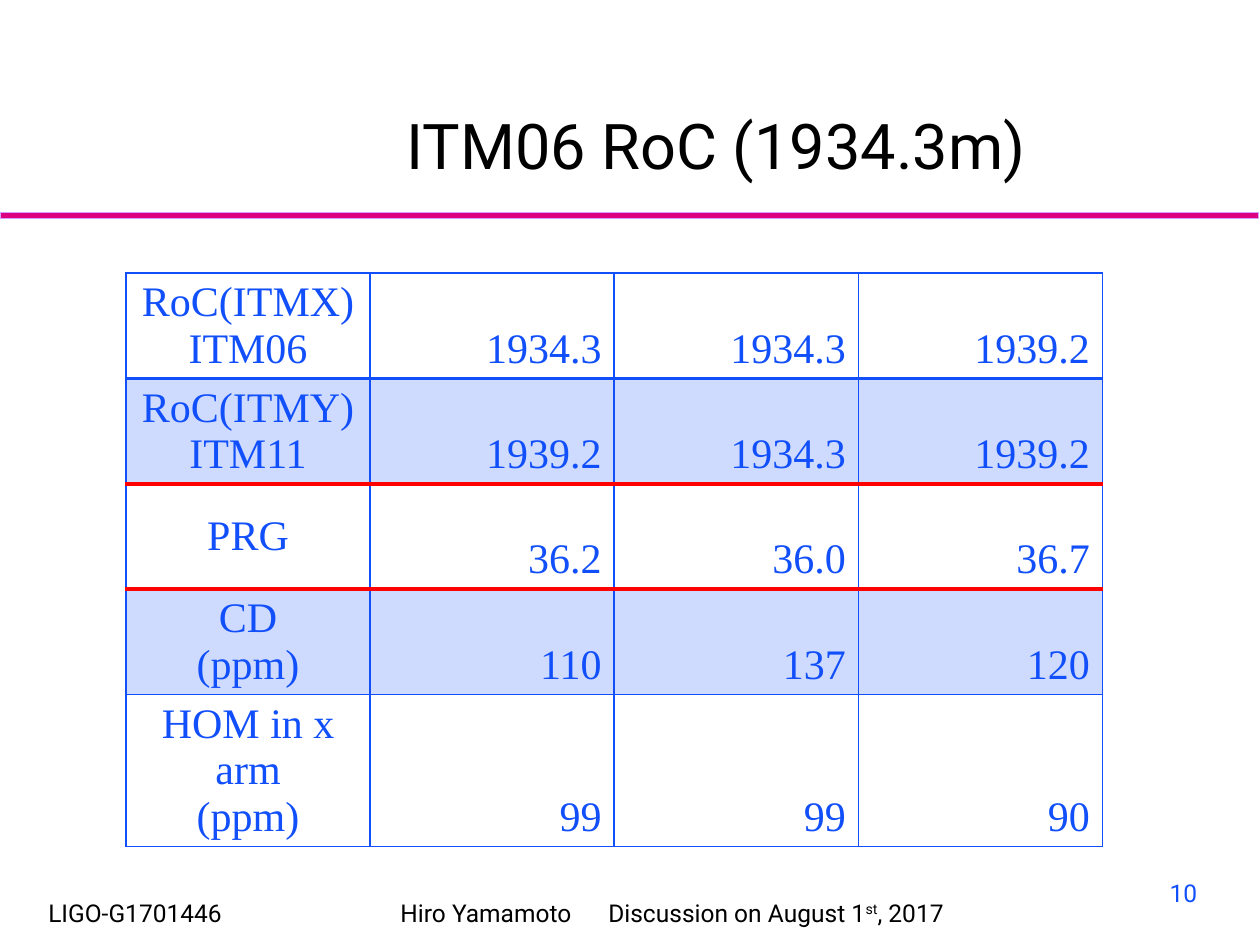
from lxml import etree
from pptx import Presentation
from pptx.dml.color import RGBColor
from pptx.enum.shapes import MSO_SHAPE
from pptx.enum.text import MSO_ANCHOR, MSO_AUTO_SIZE, PP_ALIGN
from pptx.oxml.ns import qn
from pptx.util import Pt

LEFT, MID, RIGHT = PP_ALIGN.LEFT, PP_ALIGN.CENTER, PP_ALIGN.RIGHT
CENTER, BASE = MSO_ANCHOR.MIDDLE, MSO_ANCHOR.BOTTOM
FIXED = MSO_AUTO_SIZE.NONE
RECT = MSO_SHAPE.RECTANGLE

SANS, SERIF = "Roboto", "Times New Roman"
BLACK, BLUE, RED = "000000", "114FFB", "FF0000"
PINK, LILAC = "DC0081", "D49FFF"

ROWS = [
    (["RoC(ITMX)", "ITM06"], "1934.3", "1934.3", "1939.2"),
    (["RoC(ITMY)", "ITM11"], "1939.2", "1934.3", "1939.2"),
    (["PRG"], "36.2", "36.0", "36.7"),
    (["CD", "(ppm)"], "110", "137", "120"),
    (["HOM in x arm", "(ppm)"], "99", "99", "90"),
]
# Rules between rows, from the top edge to the bottom edge
RULES = [(BLUE, 1), (BLUE, 2), (RED, 2.25), (RED, 2.25), (BLUE, 1), (BLUE, 1)]


def color(code):
    return RGBColor.from_string(code)


def add_run(para, text, size, face, code):
    run = para.add_run()
    run.text = text
    run.font.size = Pt(size)
    run.font.name = face
    run.font.color.rgb = color(code)
    return run


def set_frame(frame, anchor, insets, wrap=True):
    frame.auto_size = FIXED
    frame.word_wrap = wrap
    frame.vertical_anchor = anchor
    (frame.margin_left, frame.margin_top,
     frame.margin_right, frame.margin_bottom) = [Pt(n) for n in insets]


def add_label(slide, box, align, insets, wrap=True):
    shape = slide.shapes.add_textbox(*[Pt(n) for n in box])
    set_frame(shape.text_frame, CENTER, insets, wrap)
    para = shape.text_frame.paragraphs[0]
    para.alignment = align
    return para


def add_tab(para, pos):
    stops = etree.SubElement(para._p.get_or_add_pPr(), qn("a:tabLst"))
    etree.SubElement(stops, qn("a:tab"), pos=str(Pt(pos)), algn="l")


def add_title(slide):
    title = slide.shapes.title
    title.left, title.top = Pt(126), Pt(0)
    title.width, title.height = Pt(570), Pt(108)
    set_frame(title.text_frame, BASE, (3.6, 4, 7.2, 4))
    para = title.text_frame.paragraphs[0]
    para.alignment = MID
    add_run(para, "ITM06 RoC (1934.3m)", 36, SANS, BLACK)


def add_bar(slide):
    bar = slide.shapes.add_shape(RECT, Pt(0), Pt(121.5), Pt(719), Pt(3.2))
    bar.shadow.inherit = False
    bar.fill.solid()
    bar.fill.fore_color.rgb = color(PINK)
    bar.line.color.rgb = color(LILAC)
    bar.line.width = Pt(0.75)


def add_edge(cell, side, code, width):
    line = etree.SubElement(cell._tc.get_or_add_tcPr(), qn("a:ln" + side),
                            w=str(Pt(width)))
    fill = etree.SubElement(line, qn("a:solidFill"))
    etree.SubElement(fill, qn("a:srgbClr"), val=code)


def shade(cell, code, alpha):
    cell.fill.solid()
    cell.fill.fore_color.rgb = color(code)
    # Only the cell's own fill, not that of its edges
    tint = cell._tc.tcPr.find(qn("a:solidFill")).find(qn("a:srgbClr"))
    etree.SubElement(tint, qn("a:alpha"), val=str(alpha * 1000))


def fill_cell(cell, lines, align, anchor):
    cell.vertical_anchor = anchor
    frame = cell.text_frame
    for i, text in enumerate(lines):
        para = frame.add_paragraph() if i else frame.paragraphs[0]
        para.alignment = align
        add_run(para, text, 24, SERIF, BLUE)


def add_grid(slide):
    frame = slide.shapes.add_table(len(ROWS), len(ROWS[0]), Pt(72), Pt(156),
                                   Pt(558), Pt(300))
    table = frame.table
    table.first_row = table.horz_banding = False
    for r, (head, *vals) in enumerate(ROWS):
        for c, lines in enumerate([head] + [[val] for val in vals]):
            cell = table.cell(r, c)
            fill_cell(cell, lines, RIGHT if c else MID, BASE if c else CENTER)
            edges = [("L", (BLUE, 1)), ("R", (BLUE, 1)),
                     ("T", RULES[r]), ("B", RULES[r + 1])]
            for side, rule in edges:
                add_edge(cell, side, *rule)
            if r % 2:
                shade(cell, BLUE, 20)
            else:
                cell.fill.background()


def add_footer(slide):
    # Document number
    para = add_label(slide, (24, 503.5, 115, 36.5), LEFT, (3.6, 0, 3.6, 0))
    add_run(para, "LIGO-G1701446", 14, SANS, BLACK)

    # Author and occasion, parted by a tab
    para = add_label(slide, (168, 509, 432, 25), LEFT, (60.8, 0, 3.6, 0))
    add_tab(para, 118.8)
    add_run(para, "Hiro Yamamoto\tDiscussion on August 1", 14, SANS, BLACK)
    mark = add_run(para, "st", 14, SANS, BLACK)
    mark._r.get_or_add_rPr().set("baseline", "30000")
    add_run(para, ", 2017", 14, SANS, BLACK)

    # Page number
    para = add_label(slide, (664, 497.5, 24.5, 25), MID, (7.2, 3.6, 7.2, 3.6),
                     False)
    add_run(para, "10", 14, SANS, BLUE)


def main():
    deck = Presentation()
    deck.slide_width, deck.slide_height = Pt(720), Pt(540)
    slide = deck.slides.add_slide(deck.slide_layouts[5])
    add_bar(slide)
    add_title(slide)
    add_grid(slide)
    add_footer(slide)
    deck.save("out.pptx")


if __name__ == "__main__":
    main()
